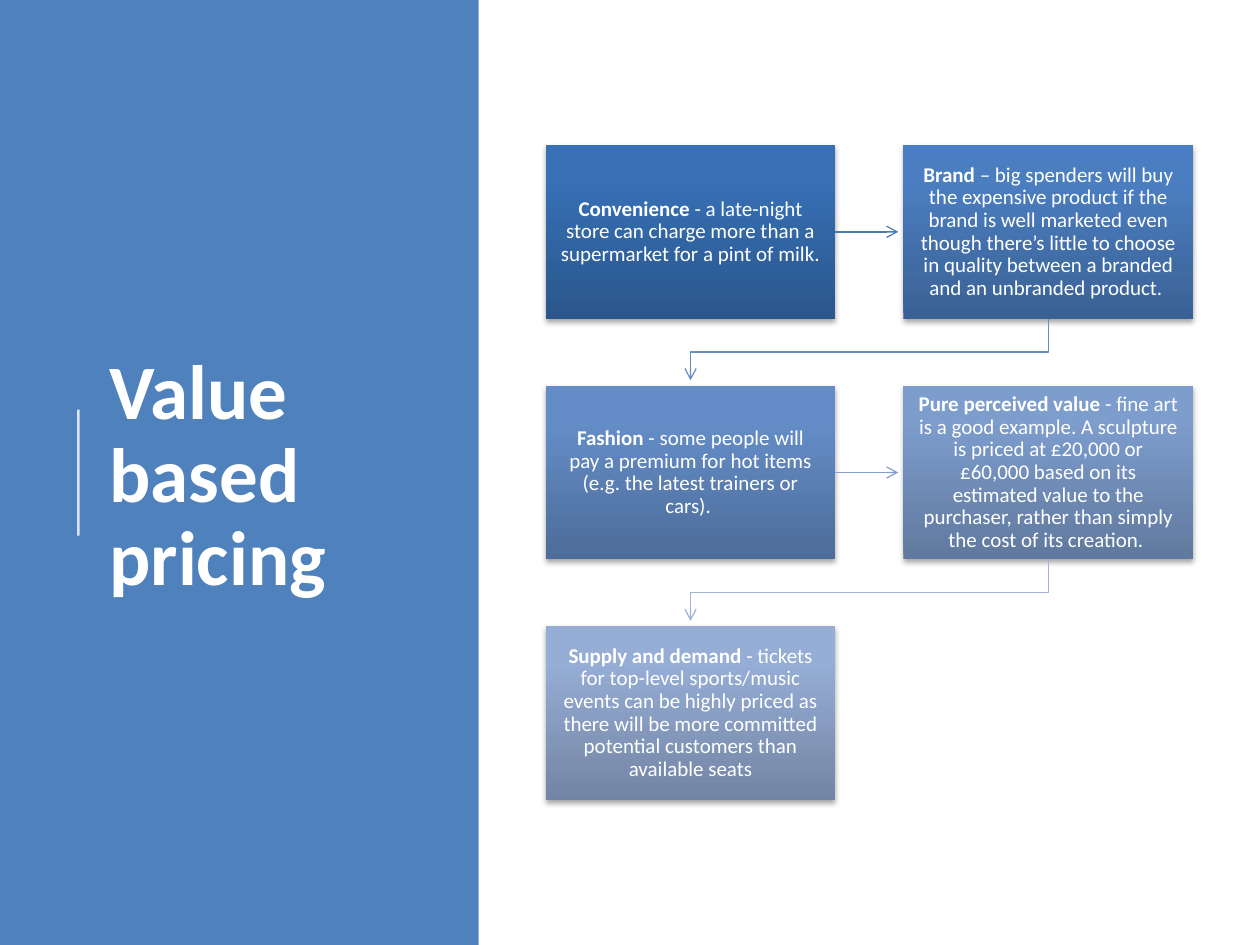
from copy import deepcopy

from lxml import etree
from pptx import Presentation
from pptx.dml.color import RGBColor
from pptx.enum.shapes import MSO_CONNECTOR, MSO_SHAPE
from pptx.enum.text import MSO_ANCHOR, MSO_AUTO_SIZE, PP_ALIGN
from pptx.oxml.ns import qn
from pptx.util import Pt

RECT, STRAIGHT = MSO_SHAPE.RECTANGLE, MSO_CONNECTOR.STRAIGHT
MIDDLE, CENTER, LEFT = MSO_ANCHOR.MIDDLE, PP_ALIGN.CENTER, PP_ALIGN.LEFT
NO_FIT = MSO_AUTO_SIZE.NONE
RIGHT_SIDE = 3

FONT = "Calibri"
WHITE = RGBColor(0xFF, 0xFF, 0xFF)
PANEL = RGBColor(0x4F, 0x81, 0xBD)

# Grid of boxes, in points
GRID_X, GRID_Y = 311.8, 82.8
BOX_W, BOX_H = 165.6, 99.4
STEP_X, STEP_Y = 204.5, 137.5
ARROW_GAP = 3
COLUMNS = 2

# Heading, text, gradient from bottom to top
BOXES = [
    ("Convenience",
     " - a late-night store can charge more than a supermarket for a pint of milk. ",
     ("2A568B", "3770B5", "3570B8")),
    ("Brand",
     " – big spenders will buy the expensive product if the brand is well marketed "
     "even though there’s little to choose in quality between a branded and an "
     "unbranded product. ",
     ("3A6194", "4B7EC1", "497EC4")),
    ("Fashion",
     " - some people will pay a premium for hot items (e.g. the latest trainers or cars). ",
     ("4D6C99", "648DC7", "638DCA")),
    ("Pure perceived value",
     " - fine art is a good example. A sculpture is priced at £20,000 or £60,000 based "
     "on its estimated value to the purchaser, rather than simply the cost of its creation. ",
     ("60799E", "7D9DCD", "7C9DD0")),
    ("Supply and demand",
     " - tickets for top-level sports/music events can be highly priced as there will be "
     "more committed potential customers than available seats",
     ("7385A4", "96ADD5", "95ADD7")),
]
STOPS = (0, 0.8, 1)
ARROW_COLORS = [RGBColor.from_string(c) for c in ("4B7BB5", "698DBE", "85A0C9", "A1B4D4")]


def sub(parent, tag, **attrs):
    return etree.SubElement(parent, qn(tag), attrs)


def style_run(r, size, bold):
    r.font.name, r.font.size, r.font.bold = FONT, Pt(size), bold
    r.font.color.rgb = WHITE


def fill_gradient(shape, colors):
    shape.fill.gradient()
    shape.fill.gradient_angle = 90
    stop_list = shape.element.spPr.find(".//" + qn("a:gsLst"))
    stop_list.append(deepcopy(stop_list[-1]))
    for stop, position, color in zip(shape.fill.gradient_stops, STOPS, colors):
        stop.position = position
        stop.color.rgb = RGBColor.from_string(color)


def add_shadow(shape):
    shape.shadow.inherit = False
    effects = shape.element.spPr.find(qn("a:effectLst"))
    shadow = sub(effects, "a:outerShdw", blurRad=str(Pt(3.1)), dist=str(Pt(1.8)),
                 dir="5400000", rotWithShape="0")
    sub(sub(shadow, "a:srgbClr", val="000000"), "a:alpha", val="35000")


def box_position(index):
    row, column = divmod(index, COLUMNS)
    return GRID_X + column * STEP_X, GRID_Y + row * STEP_Y


def add_box(s, index, heading, text, colors):
    x, y = box_position(index)
    box = s.shapes.add_shape(RECT, Pt(x), Pt(y), Pt(BOX_W), Pt(BOX_H))
    fill_gradient(box, colors)
    box.line.fill.background()
    add_shadow(box)
    tf = box.text_frame
    tf.word_wrap, tf.vertical_anchor = True, MIDDLE
    tf.margin_left = tf.margin_right = Pt(8)
    tf.margin_top = tf.margin_bottom = Pt(8.5)
    p = tf.paragraphs[0]
    p.alignment, p.line_spacing = CENTER, 0.9
    for content, bold in ((heading, True), (text, False)):
        r = p.add_run()
        r.text = content
        style_run(r, 12, bold)
    return box


def add_line(s, x1, y1, x2, y2, color, width):
    line = s.shapes.add_connector(STRAIGHT, Pt(x1), Pt(y1), Pt(x2), Pt(y2))
    line.line.color.rgb, line.line.width = color, Pt(width)
    sub(line.element.spPr, "a:effectLst")
    return line


def add_arrowhead(shape):
    sub(shape.line._get_or_add_ln(), "a:tailEnd", type="arrow")


def add_row_arrow(s, index, box, color):
    x, y = box_position(index)
    middle = y + BOX_H / 2
    arrow = add_line(s, x + BOX_W, middle, x + STEP_X - ARROW_GAP, middle, color, 0.75)
    arrow.begin_connect(box, RIGHT_SIDE)
    add_arrowhead(arrow)


def add_wrap_arrow(s, index, color):
    """Leads from the last box of a row down to the first box of the next."""
    x, y = box_position(index)
    next_x, next_y = box_position(index + 1)
    start, end = x + BOX_W / 2, next_x + BOX_W / 2
    bend = (y + BOX_H + next_y) / 2
    builder = s.shapes.build_freeform(Pt(start), Pt(y + BOX_H))
    points = [(start, bend), (end, bend), (end, next_y - ARROW_GAP)]
    builder.add_line_segments([(Pt(px), Pt(py)) for px, py in points], close=False)
    arrow = builder.convert_to_shape()
    arrow.fill.background()
    arrow.line.color.rgb, arrow.line.width = color, Pt(0.75)
    arrow.shadow.inherit = False
    add_arrowhead(arrow)


def add_title_panel(s):
    title = s.shapes.title
    panel = s.shapes.add_shape(RECT, 0, 0, Pt(273.6), Pt(540))
    panel.fill.solid()
    panel.fill.fore_color.rgb = PANEL
    panel.line.fill.background()
    panel.shadow.inherit = False

    rule = add_line(s, 44.8, 306, 44.8, 234, WHITE, 1.5)
    color = rule.element.spPr.find(".//" + qn("a:srgbClr"))
    sub(color, "a:alpha", val="80000")

    # Title goes in front of the panel
    rule.element.addnext(title.element)
    title.left, title.top, title.width, title.height = Pt(55.4), Pt(56.2), Pt(198.7), Pt(433.4)
    tf = title.text_frame
    tf.text = "Value based pricing"
    tf.word_wrap, tf.auto_size, tf.vertical_anchor = True, NO_FIT, MIDDLE
    p = tf.paragraphs[0]
    p.alignment, p.line_spacing = LEFT, 0.9
    style_run(p.runs[0], 44, True)


def main():
    prs = Presentation()
    prs.slide_width, prs.slide_height = Pt(720), Pt(540)
    s = prs.slides.add_slide(prs.slide_layouts[5])
    add_title_panel(s)

    # Boxes, then the arrows that join them in reading order
    boxes = [add_box(s, i, *content) for i, content in enumerate(BOXES)]
    for i, color in enumerate(ARROW_COLORS):
        if i % COLUMNS < COLUMNS - 1:
            add_row_arrow(s, i, boxes[i], color)
        else:
            add_wrap_arrow(s, i, color)
    prs.save("out.pptx")


if __name__ == "__main__":
    main()
